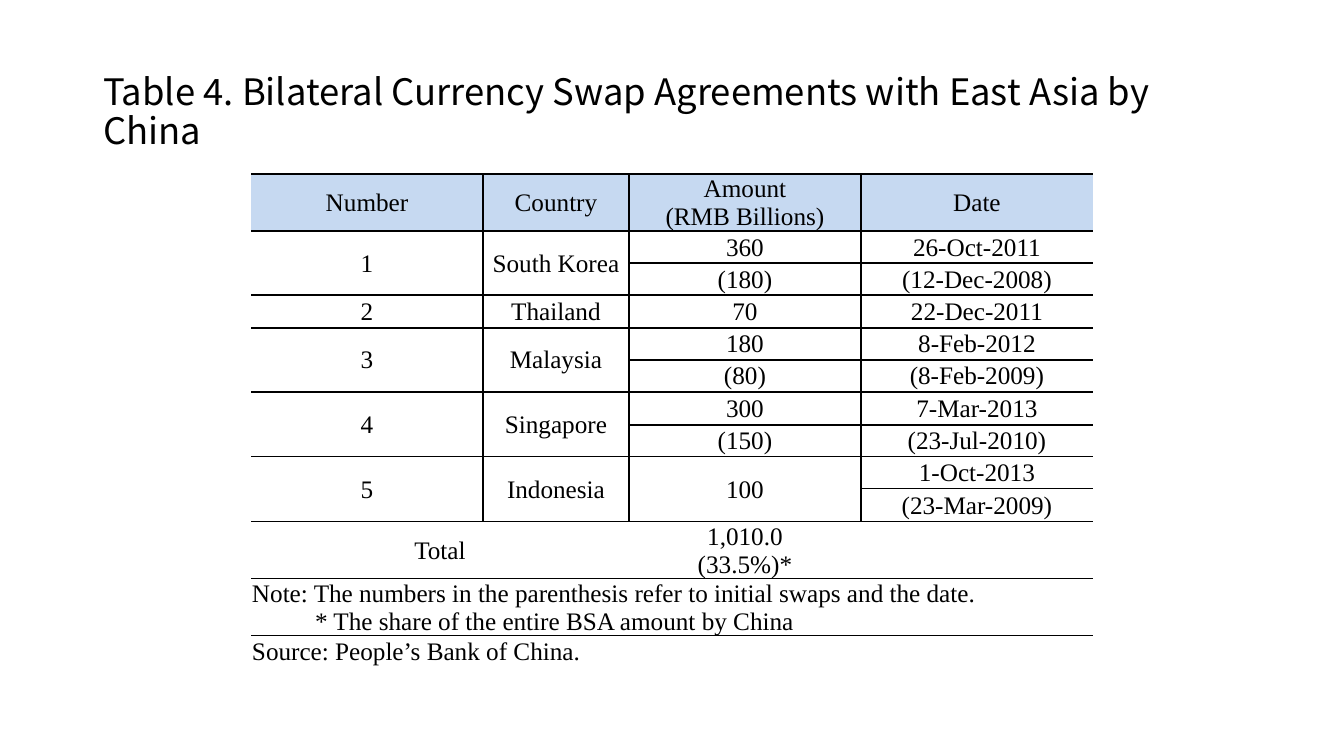
from lxml.etree import SubElement
from pptx import Presentation
from pptx.dml.color import RGBColor
from pptx.enum.text import MSO_ANCHOR as Anchor, MSO_AUTO_SIZE as AutoSize, PP_ALIGN as Align
from pptx.oxml.ns import qn
from pptx.util import Emu, Pt

PX_PER_INCH = 100.8
BLACK, HEADER_BLUE = "000000", "C6D9F1"
TITLE_FONT, TABLE_FONT = "Noto Sans CJK KR", "Times New Roman"
PLAIN_TABLE_STYLE = "{2D5ABB26-0587-4C30-8999-92F81FD0307C}"
COLUMN_WIDTHS = [232, 146, 232, 232]
ROW_HEIGHTS = [57] + [32, 32, 33] * 3 + [57, 57, 32]
TOTAL_ROW, NOTE_ROW, SOURCE_ROW = 10, 11, 12
RULED_ROWS = {0, 1, 3, 4, 6, 8, TOTAL_ROW, NOTE_ROW}
NOTE_INDENT = 63

CELL_TEXTS = [
    ["Number", "Country", "Amount\v(RMB Billions)", "Date"],
    ["1", "South Korea", "360", "26-Oct-2011"],
    ["", "", "(180)", "(12-Dec-2008)"],
    ["2", "Thailand", "70", "22-Dec-2011"],
    ["3", "Malaysia", "180", "8-Feb-2012"],
    ["", "", "(80)", "(8-Feb-2009)"],
    ["4", "Singapore", "300", "7-Mar-2013"],
    ["", "", "(150)", "(23-Jul-2010)"],
    ["5", "Indonesia", "100", "1-Oct-2013"],
    ["", "", "", "(23-Mar-2009)"],
    ["Total", "", "1,010.0\n(33.5%)*", ""],
    ["Note: The numbers in the parenthesis refer to initial swaps and the date.\n"
     "* The share of the entire BSA amount by China", "", "", ""],
    ["Source: People’s Bank of China.", "", "", ""],
]


def px(length):
    """Turn pixels into EMU."""
    return Emu(round(length * 914400 / PX_PER_INCH))


def color(code):
    """Turn a hex string into a colour."""
    return RGBColor.from_string(code)


def format_font(paragraph, name, size):
    """Set the font of a whole paragraph."""
    paragraph.font.name = name
    paragraph.font.size = Pt(size)
    paragraph.font.color.rgb = color(BLACK)


def add_title(page, text):
    """Fill and place the title placeholder."""
    title = page.shapes.title
    title.left, title.top, title.width, title.height = map(px, (93, 40, 1159, 146))
    frame = title.text_frame
    frame.text = text
    frame.auto_size = AutoSize.NONE
    frame.vertical_anchor = Anchor.MIDDLE
    para = frame.paragraphs[0]
    para.alignment = Align.LEFT
    para.line_spacing = 0.9
    format_font(para, TITLE_FONT, 26)


def add_border(cell, edge):
    """Draw a one-point line on one edge of a cell."""
    line = SubElement(cell._tc.get_or_add_tcPr(), qn(f"a:ln{edge}"), w=str(Pt(1)))
    fill = SubElement(line, qn("a:solidFill"))
    SubElement(fill, qn("a:srgbClr"), val=BLACK)


def rule_cell(cell, row, column):
    """Draw the lines between columns and between country groups."""
    in_grid = row < TOTAL_ROW
    last_column = column + cell.span_width == len(COLUMN_WIDTHS)
    edges = {
        "L": in_grid and column > 0,
        "R": in_grid and not last_column,
        "T": row in RULED_ROWS,
        "B": row + cell.span_height in RULED_ROWS,
    }
    for edge, shown in edges.items():
        if shown:
            add_border(cell, edge)


def fill_cell(cell, text, header, alignment):
    """Write and format one cell."""
    cell.text = text
    cell.vertical_anchor = Anchor.MIDDLE
    cell.margin_left = cell.margin_right = cell.margin_top = px(1)
    cell.margin_bottom = 0
    if header:
        cell.fill.solid()
        cell.fill.fore_color.rgb = color(HEADER_BLUE)
    else:
        cell.fill.background()
    for para in cell.text_frame.paragraphs:
        para.alignment = alignment
        format_font(para, TABLE_FONT, 18)


def merge_cells(table):
    """Join the two-line country groups, the total label and the notes."""
    spans = [(row, column, row + 1, column) for row in (1, 4, 6, 8) for column in (0, 1)]
    spans += [(8, 2, 9, 2), (TOTAL_ROW, 0, TOTAL_ROW, 1)]
    spans += [(row, 0, row, 3) for row in (NOTE_ROW, SOURCE_ROW)]
    for top, left, bottom, right in spans:
        table.cell(top, left).merge(table.cell(bottom, right))


def add_swap_table(page):
    """Add the table of swap agreements with its notes."""
    frame = page.shapes.add_table(
        len(ROW_HEIGHTS), len(COLUMN_WIDTHS), px(251), px(174),
        px(sum(COLUMN_WIDTHS)), px(sum(ROW_HEIGHTS)))
    table = frame.table
    table.first_row = table.horz_banding = False
    table._tbl.tblPr.find(qn("a:tableStyleId")).text = PLAIN_TABLE_STYLE
    for column, width in zip(table.columns, COLUMN_WIDTHS):
        column.width = px(width)
    for row, height in zip(table.rows, ROW_HEIGHTS):
        row.height = px(height)
    merge_cells(table)
    for row, texts in enumerate(CELL_TEXTS):
        alignment = Align.LEFT if row >= NOTE_ROW else Align.CENTER
        for column, text in enumerate(texts):
            cell = table.cell(row, column)
            rule_cell(cell, row, column)
            fill_cell(cell, text, row == 0, alignment)
    share_note = table.cell(NOTE_ROW, 0).text_frame.paragraphs[1]
    share_note._p.get_or_add_pPr().set("marL", str(px(NOTE_INDENT)))


def main():
    """Build and save the slide."""
    deck = Presentation()
    deck.slide_width, deck.slide_height = px(1344), px(756)
    page = deck.slides.add_slide(deck.slide_layouts[5])
    add_title(page, "Table 4. Bilateral Currency Swap Agreements with East Asia by China")
    add_swap_table(page)
    deck.save("out.pptx")


if __name__ == "__main__":
    main()
